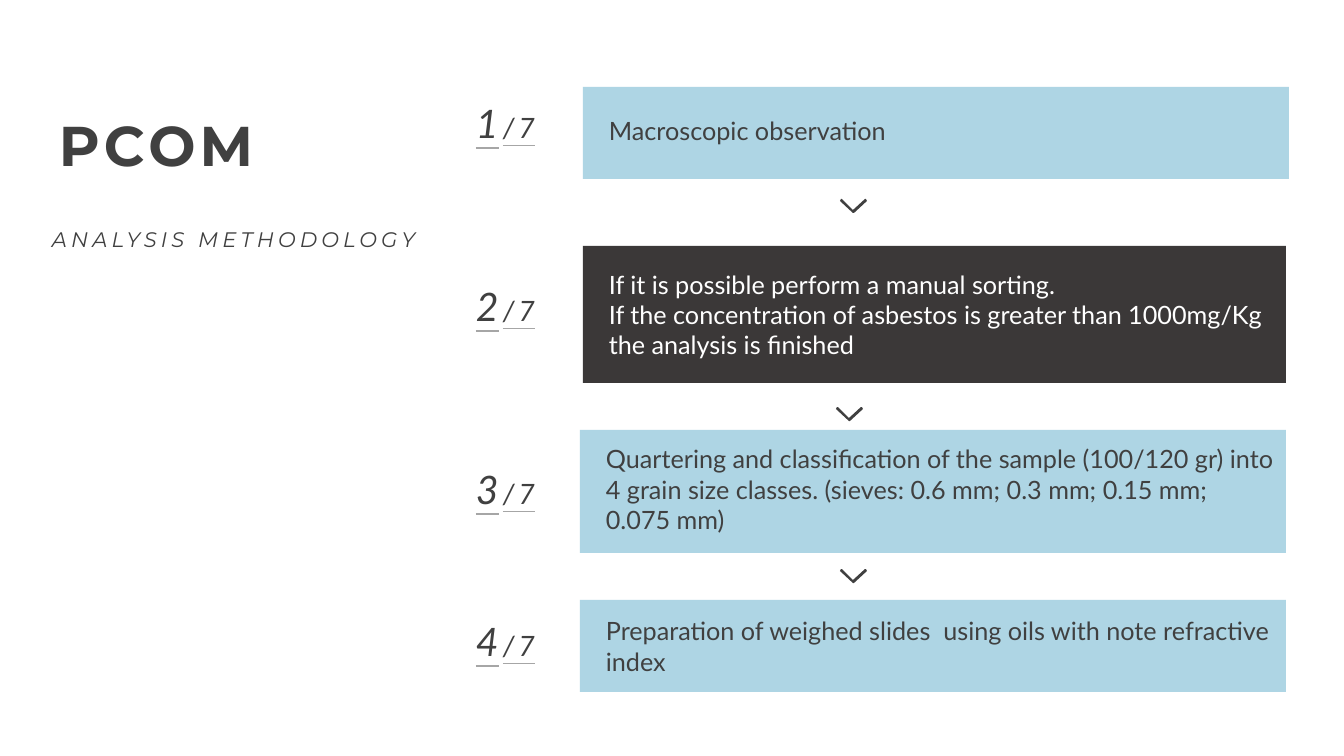
from dataclasses import dataclass

from lxml.etree import SubElement
from pptx import Presentation
from pptx.dml.color import RGBColor
from pptx.enum.shapes import MSO_SHAPE
from pptx.enum.text import MSO_ANCHOR, PP_ALIGN
from pptx.oxml.ns import qn
from pptx.util import Emu, Pt

# Content
TITLE = "PCOM"
SUBTITLE = "ANALYSIS METHODOLOGY"
TOTAL_STEPS = 7
# Each step: lines, box (left, top, width, height), counter top, bottom inset, dark
STEPS = [
    (["Macroscopic observation"], (583, 87, 706, 92), 94, 10, False),
    (["If it is possible perform a manual sorting.",
      "If the concentration of asbestos is greater than 1000mg/Kg the analysis is finished"],
     (583, 246, 703, 137), 277, 5, True),
    (["Quartering and classification of the sample (100/120 gr) into 4 grain size classes. "
      "(sieves: 0.6 mm; 0.3 mm; 0.15 mm; 0.075 mm)"], (580, 430, 706, 123), 460, 10, False),
    (["Preparation of weighed slides  using oils with note refractive index"],
     (580, 600, 706, 92), 612, 5, False),
]
CHEVRONS = [(840, 199), (836, 407), (840, 569)]
CHEVRON_OUTLINE = [(0, 2), (1, 0), (2, 0), (13, 11), (25, 0),
                   (26, 0), (27, 2), (14, 14), (13, 14)]


@dataclass(frozen=True)
class Theme:
    ink: str = "404040"
    light: str = "AED5E4"
    dark: str = "3B3838"
    white: str = "FFFFFF"
    underline: str = "A6A6A6"
    heading_font: str = "Montserrat"
    body_font: str = "Lato"
    title_size: int = 40
    subtitle_size: int = 15
    body_size: int = 18
    step_size: int = 28
    total_size: int = 20


THEME = Theme()
EMU_PER_PX = 914400 / 100.8


def px(length):
    return Emu(round(length * EMU_PER_PX))


def color(value):
    return RGBColor.from_string(value)


def add_run(paragraph, text, size, font, ink=THEME.ink, spaced=False, **style):
    run = paragraph.add_run()
    run.text = text
    run.font.size = Pt(size)
    run.font.name = font
    run.font.color.rgb = color(ink)
    for key, value in style.items():
        setattr(run.font, key, value)
    if spaced:
        run.font._element.set("spc", "300")
    return run


def add_label(left, top, width, height):
    label = slide.shapes.add_textbox(px(left), px(top), px(width), px(height))
    label.text_frame.word_wrap = True
    return label.text_frame.paragraphs[0]


def paint(shape, fill):
    shape.shadow.inherit = False
    shape.fill.solid()
    shape.fill.fore_color.rgb = color(fill)
    shape.line.fill.background()


def add_counter(number, top):
    counter = add_label(466, top, 98, 57)
    for text, size in ((str(number), THEME.step_size), (f"/{TOTAL_STEPS}", THEME.total_size)):
        run = add_run(counter, text, size, THEME.body_font, spaced=True,
                      italic=True, underline=True)
        properties = run.font._element
        underline = SubElement(properties, qn("a:uFill"))
        solid = SubElement(underline, qn("a:solidFill"))
        SubElement(solid, qn("a:srgbClr"), val=THEME.underline)
        properties.find(qn("a:latin")).addprevious(underline)


def add_step_box(lines, box, bottom_inset, dark):
    step_box = slide.shapes.add_shape(MSO_SHAPE.RECTANGLE, *map(px, box))
    paint(step_box, THEME.dark if dark else THEME.light)
    frame = step_box.text_frame
    frame.word_wrap = True
    frame.vertical_anchor = MSO_ANCHOR.MIDDLE
    frame.margin_bottom = px(bottom_inset)
    paragraph = frame.paragraphs[0]
    paragraph.alignment = PP_ALIGN.LEFT
    paragraph._p.get_or_add_pPr().set("marL", str(px(16)))
    for index, line in enumerate(lines):
        if index:
            paragraph.add_line_break()
        add_run(paragraph, line, THEME.body_size, THEME.body_font,
                THEME.white if dark else THEME.ink)


def add_chevron(left, top):
    points = [(left + x, top + y) for x, y in CHEVRON_OUTLINE]
    builder = slide.shapes.build_freeform(*points[0], scale=EMU_PER_PX)
    builder.add_line_segments(points[1:], close=True)
    paint(builder.convert_to_shape(), THEME.ink)


presentation = Presentation()
presentation.slide_width, presentation.slide_height = px(1344), px(756)
slide = presentation.slides.add_slide(presentation.slide_layouts[6])

# Headings
add_run(add_label(49, 106, 1285, 78), TITLE, THEME.title_size, THEME.heading_font,
        spaced=True, bold=True)
add_run(add_label(42, 222, 739, 35), SUBTITLE, THEME.subtitle_size, THEME.heading_font,
        spaced=True, italic=True)

# Steps with their counters
for number, (lines, box, counter_top, bottom_inset, dark) in enumerate(STEPS, 1):
    add_step_box(lines, box, bottom_inset, dark)
    add_counter(number, counter_top)

# Chevrons between steps
for left, top in CHEVRONS:
    add_chevron(left, top)

presentation.save("out.pptx")
